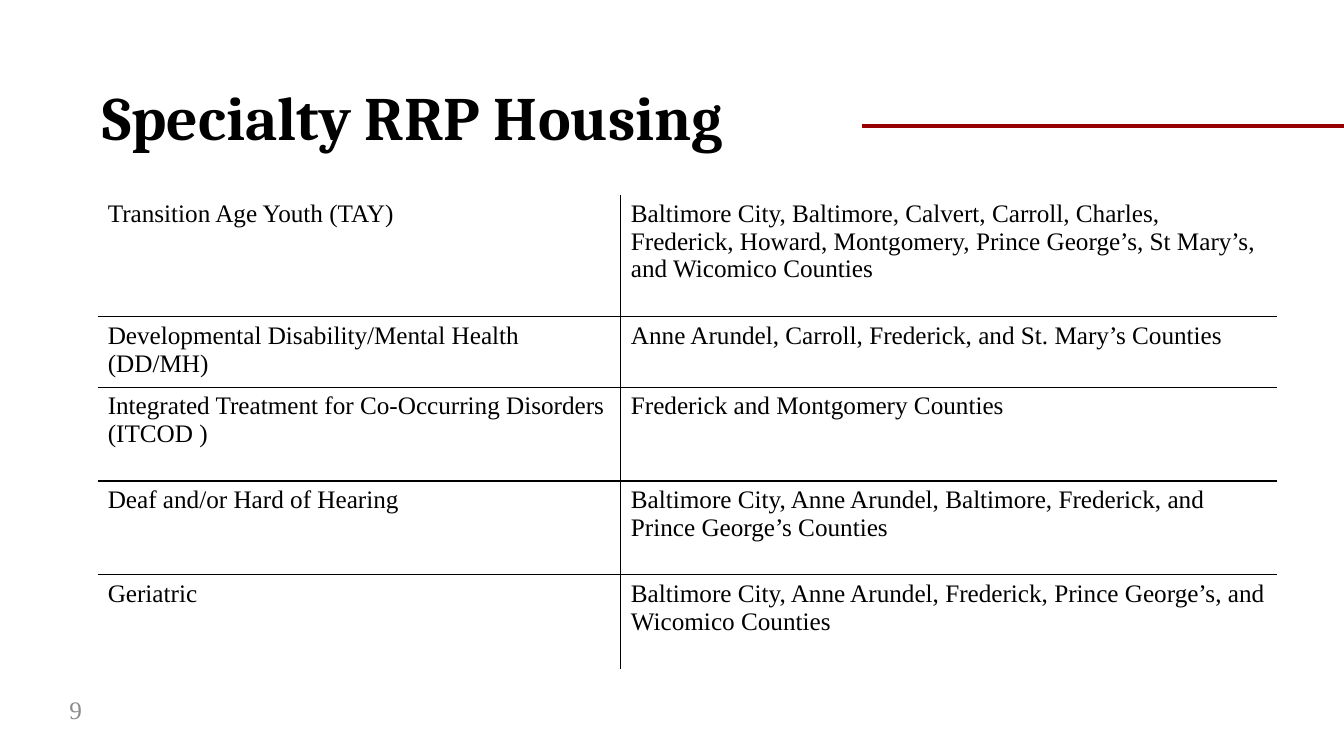
import pptx
import pptx.util
import pptx.dml.color
import pptx.enum.shapes
import pptx.enum.text
import pptx.oxml
import pptx.oxml.ns

Pt = pptx.util.Pt
COLORS = {"text": "000000", "number": "8C8C8C", "rule": "980000", "border": "000000"}
BODY_FONT = "Times New Roman"
COLUMN_WIDTHS = [373.7, 468.7]
HOUSING_ROWS = [
    (87.2, "Transition Age Youth (TAY)",
     "Baltimore City, Baltimore, Calvert, Carroll, Charles, Frederick, Howard, "
     "Montgomery, Prince George’s, St Mary’s, and Wicomico Counties"),
    (47.2, "Developmental Disability/Mental Health (DD/MH)",
     "Anne Arundel, Carroll, Frederick, and St. Mary’s Counties"),
    (67, "Integrated Treatment for Co-Occurring Disorders (ITCOD )",
     "Frederick and Montgomery Counties"),
    (67, "Deaf and/or Hard of Hearing",
     "Baltimore City, Anne Arundel, Baltimore, Frederick, and Prince George’s Counties"),
    (67, "Geriatric",
     "Baltimore City, Anne Arundel, Frederick, Prince George’s, and Wicomico Counties"),
]


def color(name):
    return pptx.dml.color.RGBColor.from_string(COLORS[name])


def write_text(text_frame, text, size=18, font=BODY_FONT, color_name="text",
               bold=False, line_spacing=None):
    paragraph = text_frame.paragraphs[0]
    paragraph.line_spacing = line_spacing
    run = paragraph.add_run()
    run.text = text
    run.font.size = Pt(size)
    run.font.name = font
    run.font.bold = bold
    run.font.color.rgb = color(color_name)


def add_text_box(slide, left, top, width, height, text, **text_format):
    box = slide.shapes.add_textbox(Pt(left), Pt(top), Pt(width), Pt(height))
    box.text_frame.word_wrap = True
    box.text_frame.vertical_anchor = pptx.enum.text.MSO_ANCHOR.MIDDLE
    write_text(box.text_frame, text, **text_format)


def add_heading(slide, left, top, width, height):
    add_text_box(slide, left, top, width, height, "Specialty RRP Housing",
                 size=44, font="Cambria", bold=True, line_spacing=0.9)
    rule_left, rule_top = left + 549.4, top + 43.2
    rule = slide.shapes.add_connector(
        pptx.enum.shapes.MSO_CONNECTOR.STRAIGHT,
        Pt(rule_left), Pt(rule_top), Pt(960), Pt(rule_top))
    rule.line.color.rgb = color("rule")
    rule.line.width = Pt(2.25)
    rule._element.spPr.append(pptx.oxml.parse_xml(
        f'<a:effectLst {pptx.oxml.ns.nsdecls("a")}/>'))


def set_borders(cell, visible_sides):
    properties = cell._tc.get_or_add_tcPr()
    for position, side in enumerate("LRTB"):
        fill = "<a:noFill/>"
        if side in visible_sides:
            fill = f'<a:solidFill><a:srgbClr val="{COLORS["border"]}"/></a:solidFill>'
        properties.insert(position, pptx.oxml.parse_xml(
            f'<a:ln{side} {pptx.oxml.ns.nsdecls("a")} w="{Pt(1)}">{fill}</a:ln{side}>'))


def add_housing_table(slide, left, top):
    heights = [row[0] for row in HOUSING_ROWS]
    table = slide.shapes.add_table(
        len(HOUSING_ROWS), len(COLUMN_WIDTHS), Pt(left), Pt(top),
        Pt(sum(COLUMN_WIDTHS)), Pt(sum(heights))).table
    table.first_row = False
    table.horz_banding = False
    for column, width in zip(table.columns, COLUMN_WIDTHS):
        column.width = Pt(width)
    last_row = len(HOUSING_ROWS) - 1
    for row_index, (height, *texts) in enumerate(HOUSING_ROWS):
        table.rows[row_index].height = Pt(height)
        for column_index, text in enumerate(texts):
            cell = table.cell(row_index, column_index)
            cell.fill.background()
            sides = "RL"[column_index]
            sides += "T" if row_index > 0 else ""
            sides += "B" if row_index < last_row else ""
            set_borders(cell, sides)
            write_text(cell.text_frame, text)


def add_slide_number(slide, left, top, width, height):
    add_text_box(slide, left, top, width, height, "9", color_name="number")


def main():
    presentation = pptx.Presentation()
    presentation.slide_width = Pt(960)
    presentation.slide_height = Pt(540)
    slide = presentation.slides.add_slide(presentation.slide_layouts[6])
    add_heading(slide, 66.2, 46.8, 828, 78.5)
    add_slide_number(slide, 42.5, 492.5, 42.5, 28.8)
    add_housing_table(slide, 69.8, 139)
    presentation.save("out.pptx")


if __name__ == "__main__":
    main()
